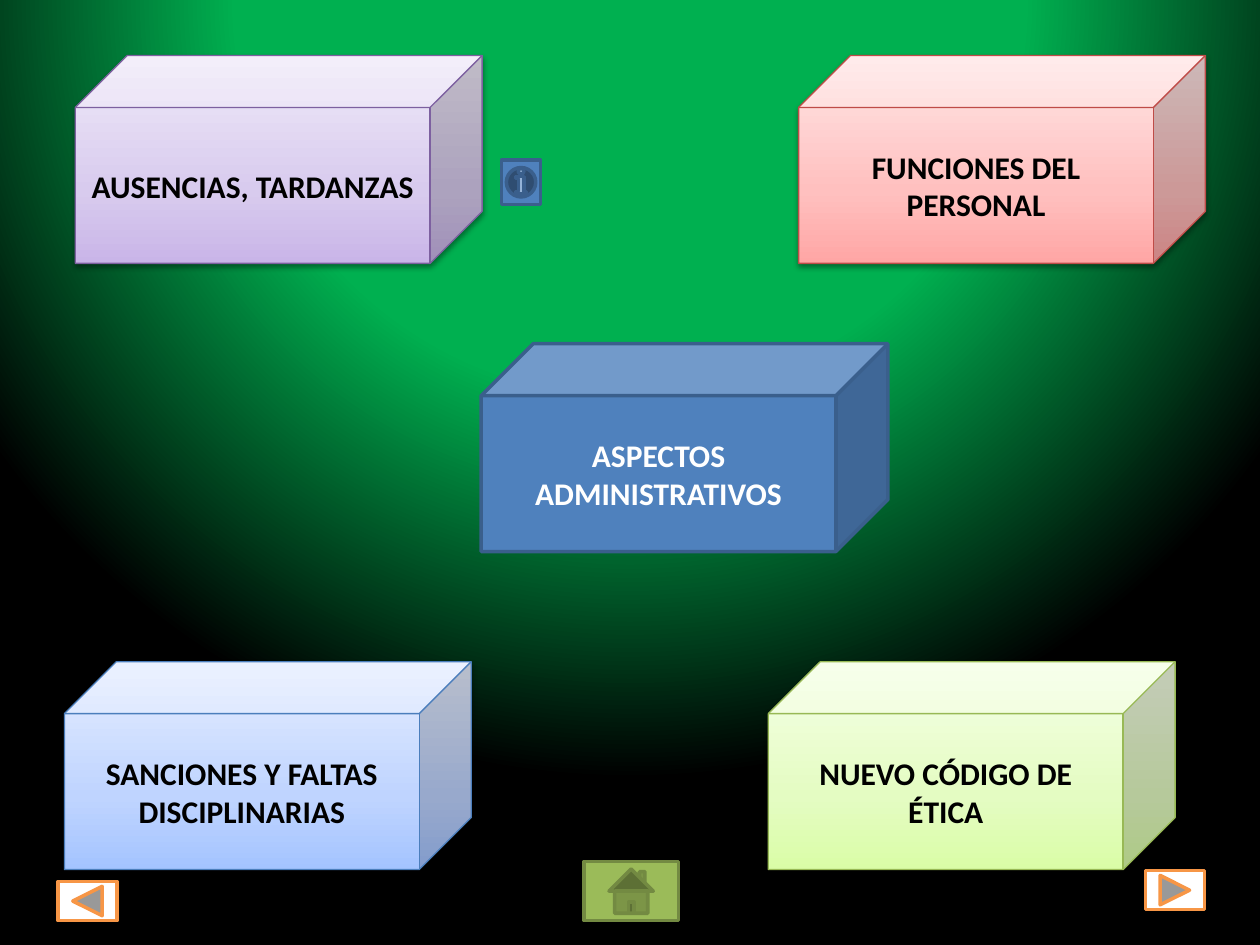
from pptx import Presentation
from pptx.dml.color import RGBColor
from pptx.enum.shapes import MSO_SHAPE as SHAPE
from pptx.enum.text import MSO_ANCHOR, PP_ALIGN
from pptx.oxml import parse_xml
from pptx.oxml.ns import nsdecls
from pptx.util import Cm, Pt

CUBE_W, CUBE_H = 8.2, 4.19
TOP_Y, BOTTOM_Y = 1.12, 13.34

# text, left, top, gradient colours from the bottom up, line
TOPICS = [
    ("SANCIONES Y FALTAS DISCIPLINARIAS", 1.3, BOTTOM_Y,
     ("A4C4FF", "BFD4FF", "E6EEFF"), "4B7EBC"),
    ("AUSENCIAS, TARDANZAS", 1.52, TOP_Y,
     ("C9B5E8", "D8CBEE", "F0EAF9"), "7D60A0"),
    ("FUNCIONES DEL PERSONAL", 16.1, TOP_Y,
     ("FFA6A5", "FFC0BF", "FFE7E7"), "BF4C48"),
    ("NUEVO CÓDIGO DE ÉTICA", 15.49, BOTTOM_Y,
     ("DAFDA7", "E4FCC2", "F5FFE7"), "98B955"),
]


def rgb(color):
    return RGBColor.from_string(color)


def use_gradient(owner, stops, direction):
    """Replace the owner's solid fill with a gradient."""
    gs = "".join(f'<a:gs pos="{pos * 1000}"><a:srgbClr val="{color}"/></a:gs>'
                 for pos, color in stops)
    solid = owner.xpath("./a:solidFill")[0]
    owner.replace(solid, parse_xml(
        f'<a:gradFill {nsdecls("a")} rotWithShape="1">'
        f'<a:gsLst>{gs}</a:gsLst>{direction}</a:gradFill>'))


def add_background(slide):
    slide.background.fill.solid()
    use_gradient(
        slide.element.xpath(".//p:bgPr")[0], [(50, "00B050"), (99, "000000")],
        '<a:path path="circle">'
        '<a:fillToRect l="50000" t="-80000" r="50000" b="180000"/></a:path>')


def add_box(slide, kind, x, y, w, h, fill, line, line_w=2):
    sp = slide.shapes.add_shape(kind, Cm(x), Cm(y), Cm(w), Cm(h))
    sp.shadow.inherit = False
    sp.fill.solid()
    sp.fill.fore_color.rgb = rgb(fill)
    sp.line.color.rgb = rgb(line)
    sp.line.width = Pt(line_w)
    return sp


def add_cube(slide, text, x, y, fill, line, line_w=2, color="FFFFFF"):
    sp = add_box(slide, SHAPE.CUBE, x, y, CUBE_W, CUBE_H, fill, line, line_w)
    tf = sp.text_frame
    tf.word_wrap = True
    tf.vertical_anchor = MSO_ANCHOR.MIDDLE
    p = tf.paragraphs[0]
    p.text = text
    p.alignment = PP_ALIGN.CENTER
    p.font.name = "Calibri"
    p.font.size = Pt(18)
    p.font.bold = True
    p.font.color.rgb = rgb(color)
    return sp


def add_topic(slide, text, x, y, colors, line):
    """A cube with a vertical gradient and a soft shadow."""
    sp = add_cube(slide, text, x, y, colors[0], line, 0.75, "000000")
    sp_pr = sp.element.spPr
    use_gradient(sp_pr, zip((0, 35, 100), colors), '<a:lin ang="16200000"/>')
    sp_pr.xpath("./a:effectLst")[0].append(parse_xml(
        f'<a:outerShdw {nsdecls("a")} blurRad="40000" dist="20000" '
        'dir="5400000" rotWithShape="0"><a:srgbClr val="000000">'
        '<a:alpha val="38000"/></a:srgbClr></a:outerShdw>'))


def add_navigation(slide, x, y, w, h):
    """Home in the middle, next at the right, back at the left."""
    home_w, arrow_w, arrow_h = 1.9, 1.19, 0.79
    add_box(slide, SHAPE.ACTION_BUTTON_HOME, x + (w - home_w) / 2, y,
            home_w, h, "9BBB59", "738A42")
    for kind, left, top in (
            (SHAPE.ACTION_BUTTON_FORWARD_OR_NEXT, x + w - arrow_w, y + 0.18),
            (SHAPE.ACTION_BUTTON_BACK_OR_PREVIOUS, x, y + h - arrow_h)):
        add_box(slide, kind, left, top, arrow_w, arrow_h, "FFFFFF", "F79646")


def main():
    prs = Presentation()
    prs.slide_width, prs.slide_height = Cm(25.4), Cm(19.05)
    slide = prs.slides.add_slide(prs.slide_layouts[6])
    add_background(slide)

    # Central theme and the topics around it
    add_cube(slide, "ASPECTOS ADMINISTRATIVOS", 9.7, 6.93, "4F81BD", "3A5F8C")
    for topic in TOPICS:
        add_topic(slide, *topic)

    # Buttons
    add_navigation(slide, 1.17, 17.37, 23.11, 1.19)
    add_box(slide, SHAPE.ACTION_BUTTON_INFORMATION, 10.11, 3.23, 0.79, 0.89,
            "4F81BD", "3A5F8C")
    prs.save("out.pptx")


if __name__ == "__main__":
    main()
